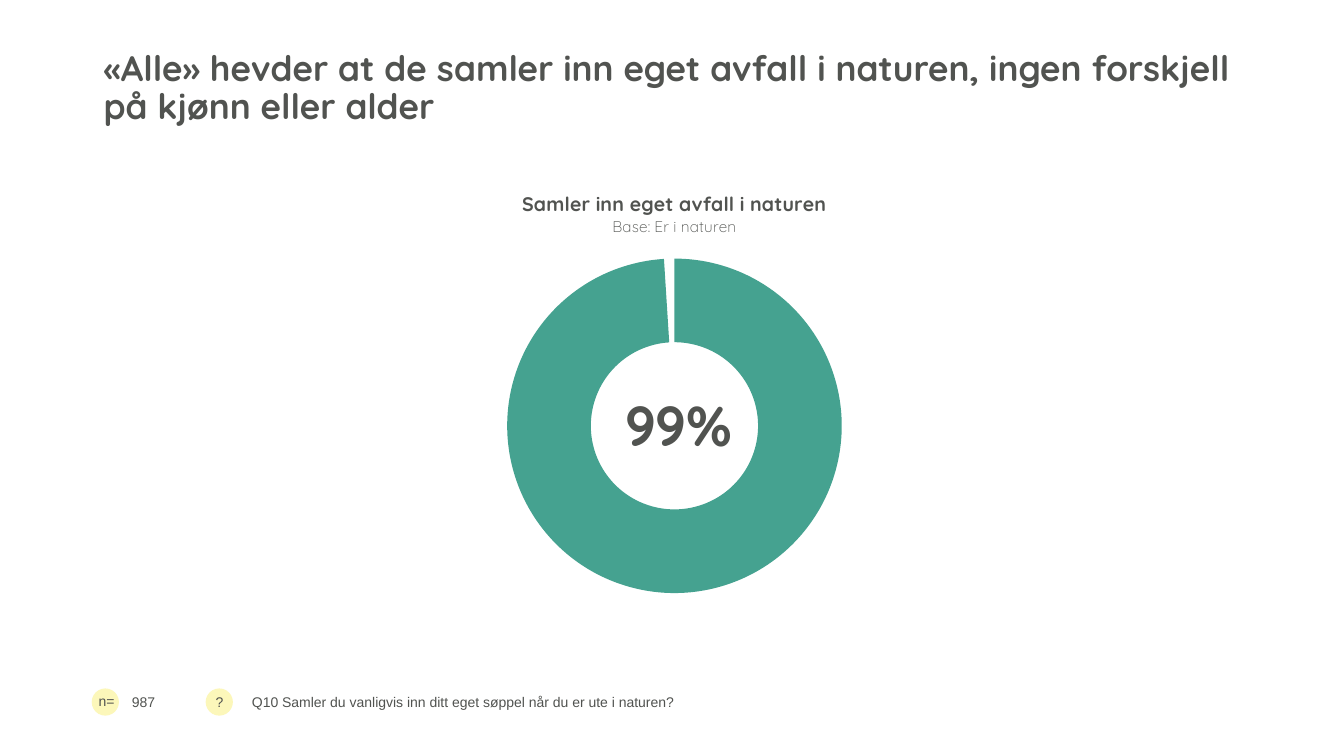
"""Builds the slide on collecting one's own waste in nature, with a doughnut chart."""
import pptx
import pptx.chart.data
import pptx.dml.color
import pptx.enum.chart
import pptx.enum.shapes
import pptx.enum.text
import pptx.oxml
import pptx.util
from pptx.util import Inches

GREY, GREEN, YELLOW = "515350", "45A290", "FCF7BA"
MIDDLE = pptx.enum.text.MSO_ANCHOR.MIDDLE
BOTTOM = pptx.enum.text.MSO_ANCHOR.BOTTOM
TOP = pptx.enum.text.MSO_ANCHOR.TOP


def color(value):
    return pptx.dml.color.RGBColor.from_string(value)


def style(font, name, size, bold=False):
    formats = {"name": name, "size": pptx.util.Pt(size), "bold": bold}
    for attribute, value in formats.items():
        setattr(font, attribute, value)
    font.color.rgb = color(GREY)


deck = pptx.Presentation()
deck.slide_width, deck.slide_height = Inches(13.33), Inches(7.5)
slide = deck.slides.add_slide(deck.slide_layouts[6])

for left in (2.04, 0.91):
    badge = slide.shapes.add_shape(
        pptx.enum.shapes.MSO_SHAPE.OVAL, Inches(left), Inches(6.83), Inches(0.27), Inches(0.27))
    badge.shadow.inherit = False
    badge.fill.solid()
    badge.fill.fore_color.rgb = color(YELLOW)
    badge.line.fill.background()

texts = [
    ("n=", (0.88, 6.82, 0.45, 0.27), TOP, "Arial", 10, False),
    ("?", (2.04, 6.83, 0.25, 0.27), TOP, "Arial", 10, False),
    ("«Alle» hevder at de samler inn eget avfall i naturen, ingen forskjell på kjønn eller alder",
     (0.93, 0.39, 11.52, 0.92), BOTTOM, "Quicksand", 25.2, True),
    ("Q10 Samler du vanligvis inn ditt eget søppel når du er ute i naturen?",
     (2.4, 6.67, 10.05, 0.58), MIDDLE, "Arial", 10, False),
    ("987", (1.21, 6.83, 0.74, 0.27), MIDDLE, "Arial", 10, False),
]
for wording, place, anchor, name, size, bold in texts:
    frame = slide.shapes.add_textbox(*map(Inches, place)).text_frame
    frame.word_wrap = True
    frame.vertical_anchor = anchor
    paragraph = frame.paragraphs[0]
    paragraph.text = wording
    paragraph.line_spacing = 0.9 if bold else 1.0
    style(paragraph.font, name, size, bold)

shares = pptx.chart.data.CategoryChartData(number_format="0%")
shares.categories = ["1", "2"]
shares.add_series("Series 1", (0.99, 0.01))
doughnut = slide.shapes.add_chart(
    pptx.enum.chart.XL_CHART_TYPE.DOUGHNUT,
    Inches(0.93), Inches(1.7), Inches(11.52), Inches(4.81), shares).chart
style(doughnut.font, "Arial", 10)
doughnut.has_legend = False
doughnut.has_title = True
heading = doughnut.chart_title.text_frame
heading.text = "Samler inn eget avfall i naturen\nBase: Er i naturen"
for paragraph, name, size, bold in zip(
        heading.paragraphs, ("Quicksand", "Quicksand Light"), (14, 11), (True, False)):
    style(paragraph.font, name, size, bold)
    style(paragraph.runs[0].font, name, size, bold)

plot = doughnut.plots[0]
plot.vary_by_categories = False
collected, remainder = (plot.series[0].points[index] for index in range(2))
collected.format.fill.solid()
collected.format.fill.fore_color.rgb = color(GREEN)
remainder.format.fill.background()
for point in (collected, remainder):
    point.format.line.fill.background()

plot.has_data_labels = True
labels = plot.data_labels
labels.number_format, labels.number_format_is_linked = "0%", False
labels.show_value = True
labels.show_percentage = False
style(collected.data_label.font, "Quicksand", 40, True)

CHART_NS = 'xmlns:c="http://schemas.openxmlformats.org/drawingml/2006/chart"'
series_labels = plot.series[0].data_labels
series_labels.number_format, series_labels.number_format_is_linked = "0%", False
series_labels.show_value = True
label = series_labels._element.find("{*}dLbl")
label.insert(1, pptx.oxml.parse_xml(
    f'<c:layout {CHART_NS}><c:manualLayout><c:x val="0"/><c:y val="-0.26"/>'
    '</c:manualLayout></c:layout>'))
label.addnext(pptx.oxml.parse_xml(
    f'<c:dLbl {CHART_NS}><c:idx val="1"/><c:delete val="1"/></c:dLbl>'))

plot_area = plot._element.getparent()
for layout in plot_area.findall("{*}layout"):
    plot_area.remove(layout)
plot_area.insert(0, pptx.oxml.parse_xml(
    f'<c:layout {CHART_NS}><c:manualLayout><c:layoutTarget val="inner"/>'
    '<c:xMode val="edge"/><c:yMode val="edge"/><c:x val="0.355"/><c:y val="0.18"/>'
    '<c:w val="0.29"/><c:h val="0.69"/></c:manualLayout></c:layout>'))
plot._element.find("{*}holeSize").set("val", "50")

deck.save("out.pptx")
